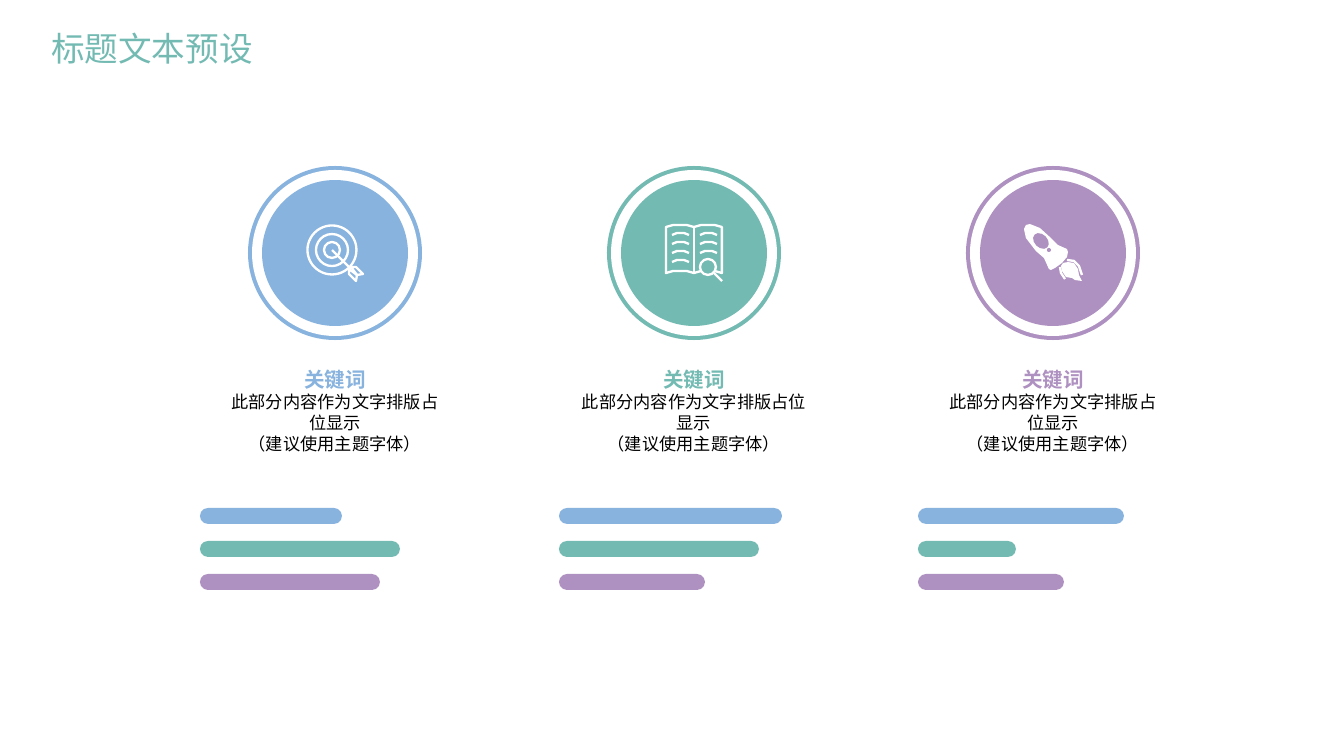
from pptx import Presentation
from pptx.dml.color import RGBColor
from pptx.enum.shapes import MSO_SHAPE
from pptx.enum.text import MSO_ANCHOR, PP_ALIGN
from pptx.util import Pt

OVAL = MSO_SHAPE.OVAL
ROUNDED = MSO_SHAPE.ROUNDED_RECTANGLE
MIDDLE = MSO_ANCHOR.MIDDLE
CENTER, RIGHT = PP_ALIGN.CENTER, PP_ALIGN.RIGHT

PX = 6804  # EMU per px, 1344 px across the slide
BLUE = RGBColor(0x88, 0xB3, 0xDE)
TEAL = RGBColor(0x73, 0xBA, 0xB3)
PURPLE = RGBColor(0xAE, 0x91, 0xC0)
WHITE = RGBColor(0xFF, 0xFF, 0xFF)
BLACK = RGBColor(0x00, 0x00, 0x00)
COLORS = [BLUE, TEAL, PURPLE]
ICON_LINE = Pt(1.25)

presentation = Presentation()
presentation.slide_width = 1344 * PX
presentation.slide_height = 756 * PX
slide = presentation.slides.add_slide(presentation.slide_layouts[6])
shapes = slide.shapes


def paint(shape, fill=None, line=None):
    shape.shadow.inherit = False
    if fill is None:
        shape.fill.background()
    else:
        shape.fill.solid()
        shape.fill.fore_color.rgb = fill
    if line is None:
        shape.line.fill.background()
    else:
        shape.line.color.rgb = line
        shape.line.width = ICON_LINE
    return shape


def add_oval(x, y, width, height, fill=None, line=None):
    """Add an oval around the centre x, y."""
    return paint(shapes.add_shape(
        OVAL, round((x - width / 2) * PX), round((y - height / 2) * PX),
        width * PX, height * PX), fill, line)


# Columns: badge, keyword, description, bars
CENTER_Y = 253
column_x = [335 + 359 * column for column in range(3)]
description_widths = [222, 228, 212]
bar_widths = [(142, 200, 180), (223, 200, 146), (206, 98, 146)]

for x, color, description_width, widths in zip(
        column_x, COLORS, description_widths, bar_widths):
    for diameter, fill in [(174, color), (166, WHITE), (146, color)]:
        add_oval(x, CENTER_Y, diameter, diameter, fill)

    texts = [
        (["关键词"], 348, 184, 11, color, True),
        (["此部分内容作为文字排版占位显示", "（建议使用主题字体）"],
         391, description_width, 9.2, BLACK, False),
    ]
    for lines, top, width, size, text_color, is_keyword in texts:
        box = shapes.add_textbox((x - width // 2) * PX, top * PX, width * PX, 63 * PX)
        frame = box.text_frame
        frame.word_wrap = not is_keyword
        frame.vertical_anchor = MIDDLE
        frame.margin_left = frame.margin_right = 0
        frame.margin_top = frame.margin_bottom = 0
        paragraph = frame.paragraphs[0]
        paragraph.alignment = CENTER
        for index, line in enumerate(lines):
            if index:
                paragraph.add_line_break()
            run = paragraph.add_run()
            run.text = line
            run.font.name = "Calibri"
            run.font.size = Pt(size)
            run.font.bold = is_keyword
            run.font.color.rgb = text_color

    for row, (width, bar_color) in enumerate(zip(widths, COLORS)):
        bar = shapes.add_shape(
            ROUNDED, (x - 135) * PX, (508 + 33 * row) * PX, width * PX, 16 * PX)
        bar.adjustments[0] = 0.5
        paint(bar, bar_color)

# Icon outlines, as points around each badge centre
target_x, book_x, rocket_x = column_x
page_top = [(-28, -26), (-21, -28), (-14, -28), (-7, -28), (0, -26),
            (7, -28), (14, -28), (21, -28), (28, -26)]
page_bottom = [(28, 20), (21, 18), (14, 18), (7, 18), (0, 20),
               (-7, 18), (-14, 18), (-21, 18), (-28, 20)]
rocket_body = [(-23, -29), (-13, -25), (-2, -15), (5, -8), (14, -4), (15, -1),
               (14, 4), (9, 10), (2, 15), (-2, 17), (-4, 16), (-9, 5),
               (-17, -2), (-27, -15), (-29, -24), (-27, -28)]
flame = [(15, 9), (21, 10), (25, 16), (26, 22), (29, 28), (22, 27),
         (19, 25), (13, 24), (9, 18), (8, 13), (10, 10)]

# centre, points, closed, filled
outlines = [
    (target_x, [(-3, -3), (16, 16)], False, False),
    (target_x, [(14, 16), (14, 21), (21, 28), (22, 22)], True, False),
    (target_x, [(16, 14), (21, 14), (28, 21), (22, 22)], True, False),
    (book_x, page_top + page_bottom, True, False),
    (book_x, [(0, -26), (0, 20)], False, False),
    (book_x, [(20, 20), (28, 28)], False, False),
    (rocket_x, rocket_body, True, True),
    (rocket_x, flame, True, True),
    (rocket_x, [(14, 7), (21, 8), (26, 13), (29, 22)], False, False),
    (rocket_x, [(7, 14), (8, 20), (12, 26)], False, False),
]
for left, line_count in [(-22, 4), (6, 3)]:
    for row in range(line_count):
        y = 9 * row - 18
        points = [(left, y), (left + 5, y - 2), (left + 12, y - 2), (left + 17, y)]
        outlines.append((book_x, points, False, False))

for x, points, closed, filled in outlines:
    points = [(x + dx, CENTER_Y + dy) for dx, dy in points]
    builder = shapes.build_freeform(*points[0], scale=PX)
    builder.add_line_segments(points[1:], close=closed)
    outline = builder.convert_to_shape()
    if filled:
        paint(outline, fill=WHITE)
    else:
        paint(outline, line=WHITE)

# Round parts of the icons
for diameter in (49, 32, 16):
    add_oval(target_x - 3, CENTER_Y - 3, diameter, diameter, line=WHITE)
add_oval(book_x + 14, CENTER_Y + 14, 16, 16, TEAL, WHITE)
window = add_oval(rocket_x - 12, CENTER_Y - 12, 18, 13, PURPLE)
window.rotation = 45
add_oval(rocket_x - 4, CENTER_Y - 3, 4, 4, PURPLE)

# Title
title = shapes.add_textbox(-5 * PX, 21 * PX, 271 * PX, 71 * PX)
title.text_frame.word_wrap = False
paragraph = title.text_frame.paragraphs[0]
paragraph.alignment = RIGHT
run = paragraph.add_run()
run.text = "标题文本预设"
run.font.name = "Noto Sans CJK SC"
run.font.size = Pt(18)
run.font.color.rgb = TEAL

presentation.save("out.pptx")
